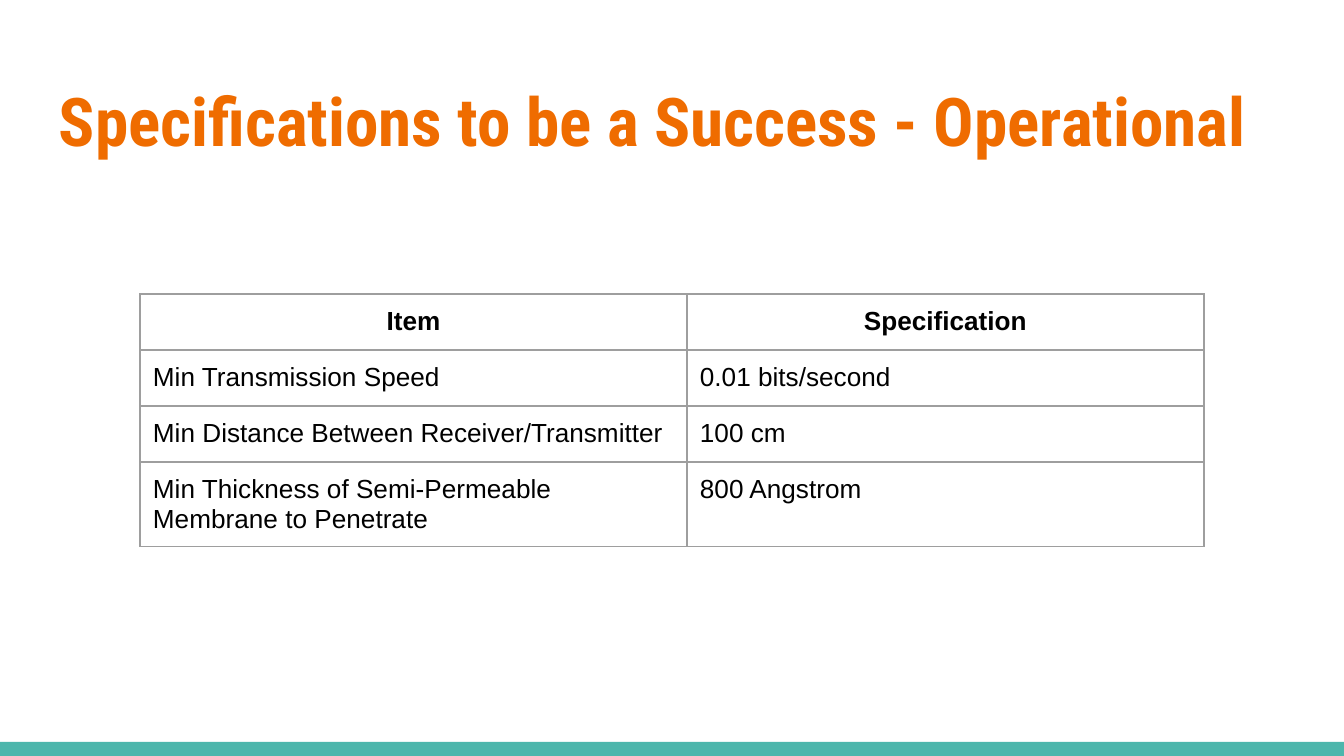
"""Build a slide with a title, a specification table and a footer bar."""
import dataclasses

import lxml.etree
import pptx
import pptx.dml.color
import pptx.enum.shapes
import pptx.enum.text
import pptx.oxml.ns
import pptx.util


@dataclasses.dataclass(frozen=True)
class Theme:
    title: str = "EF6C00"
    bar: str = "4DB6AC"
    ink: str = "000000"
    border: str = "9E9E9E"
    paper: str = "FFFFFF"
    title_font: str = "Roboto Condensed"
    body_font: str = "Arial"
    title_size: int = 36
    body_size: int = 14
    border_width: float = 0.75


theme = Theme()
rgb = pptx.dml.color.RGBColor.from_string
align = pptx.enum.text.PP_ALIGN
SCALE = 914400 / 134.4
INSET = 13


def px(length):
    return pptx.util.Emu(round(length * SCALE))


def add_span(para, text, font, size, color, bold):
    span = para.add_run()
    span.text = text
    span.font.name = font
    span.font.size = pptx.util.Pt(size)
    span.font.bold = bold
    span.font.color.rgb = rgb(color)


deck = pptx.Presentation()
deck.slide_width, deck.slide_height = px(1344), px(756)
page = deck.slides.add_slide(deck.slide_layouts.get_by_name("Title Only"))
page.background.fill.solid()
page.background.fill.fore_color.rgb = rgb(theme.paper)

bar = page.shapes.add_shape(
    pptx.enum.shapes.MSO_SHAPE.RECTANGLE, px(0), px(742), px(1344), px(14)
)
bar.shadow.inherit = False
bar.fill.solid()
bar.fill.fore_color.rgb = rgb(theme.bar)
bar.line.fill.background()

title = page.shapes.title
title.left, title.top, title.width, title.height = px(46), px(66), px(1253), px(103)
frame = title.text_frame
frame.margin_left = frame.margin_right = px(INSET)
frame.margin_top = frame.margin_bottom = px(INSET)
frame.word_wrap = True
frame.auto_size = pptx.enum.text.MSO_AUTO_SIZE.NONE
frame.vertical_anchor = pptx.enum.text.MSO_ANCHOR.TOP
para = frame.paragraphs[0]
para.alignment = align.LEFT
add_span(para, "Specifications to be a Success - Operational",
         theme.title_font, theme.title_size, theme.title, True)

specifications = [
    ("Item", "Specification"),
    ("Min Transmission Speed", "0.01 bits/second"),
    ("Min Distance Between Receiver/Transmitter", "100 cm"),
    ("Min Thickness of Semi-Permeable Membrane to Penetrate", "800 Angstrom"),
]
column_widths = [547, 517]
row_height = 56
table = page.shapes.add_table(
    len(specifications), len(column_widths), px(140), px(294),
    px(sum(column_widths)), px(row_height * len(specifications)),
).table
table.first_row = False
table.horz_banding = False
for column, width in zip(table.columns, column_widths):
    column.width = px(width)

qn = pptx.oxml.ns.qn
for row_index, texts in enumerate(specifications):
    table.rows[row_index].height = px(row_height)
    is_header = row_index == 0
    for column_index, text in enumerate(texts):
        cell = table.cell(row_index, column_index)
        cell.margin_left = cell.margin_right = px(INSET)
        cell.margin_top = cell.margin_bottom = px(INSET)
        cell.vertical_anchor = pptx.enum.text.MSO_ANCHOR.TOP
        properties = cell._tc.get_or_add_tcPr()
        for side in ("a:lnL", "a:lnR", "a:lnT", "a:lnB"):
            line = lxml.etree.SubElement(
                properties, qn(side), w=str(pptx.util.Pt(theme.border_width))
            )
            fill = lxml.etree.SubElement(line, qn("a:solidFill"))
            lxml.etree.SubElement(fill, qn("a:srgbClr"), val=theme.border)
        cell.fill.background()
        para = cell.text_frame.paragraphs[0]
        para.alignment = align.CENTER if is_header else align.LEFT
        add_span(para, text, theme.body_font, theme.body_size, theme.ink, is_header)

deck.save("out.pptx")
